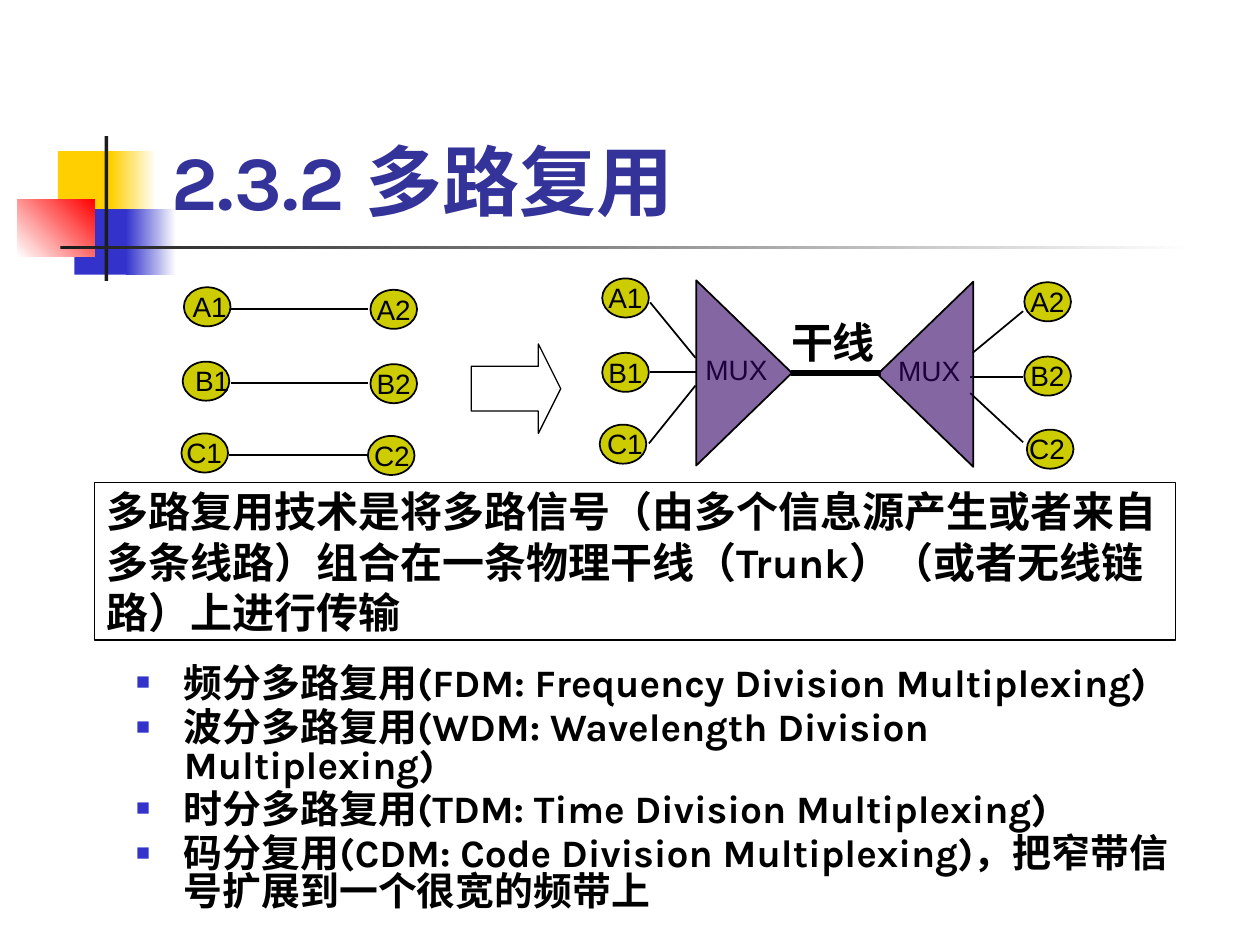
from dataclasses import dataclass

from lxml.etree import SubElement
from pptx import Presentation
from pptx.dml.color import RGBColor
from pptx.enum.shapes import MSO_CONNECTOR, MSO_SHAPE as SHAPE
from pptx.enum.text import MSO_ANCHOR as ANCHOR, MSO_AUTO_SIZE as FIT, PP_ALIGN as ALIGN
from pptx.oxml.ns import qn
from pptx.util import Pt

PX = 9144


@dataclass(frozen=True)
class Theme:
    heading: str = "333399"
    ink: str = "000000"
    paper: str = "FFFFFF"
    yellow: str = "FFCF01"
    blue: str = "3333CC"
    red: str = "FF0000"
    bar: str = "1C1C1C"
    node: str = "CCCC00"
    mux: str = "330066"
    text_font: str = "Karla"
    label_font: str = "Arial"
    title_size: float = 44
    box_size: float = 24
    list_size: float = 22.2
    label_size: float = 16


T = Theme()

TITLE = "2.3.2 多路复用"
SUMMARY = ("多路复用技术是将多路信号（由多个信息源产生或者来自多条线路）"
           "组合在一条物理干线（Trunk）（或者无线链路）上进行传输")
METHODS = [
    "频分多路复用(FDM: Frequency Division Multiplexing)",
    "波分多路复用(WDM: Wavelength Division Multiplexing)",
    "时分多路复用(TDM: Time Division Multiplexing)",
    "码分复用(CDM: Code Division Multiplexing)，把窄带信号扩展到一个很宽的频带上",
]
DECOR = [
    ((46, 120, 48, 52), (T.yellow,), 0),
    ((88, 120, 36, 52), (T.yellow, T.paper), 0),
    ((59, 166, 46, 52), (T.blue,), 0),
    ((100, 166, 40, 52), (T.blue, T.paper), 0),
    ((14, 158, 61, 46), (T.paper, T.red), 45),
    ((83, 108, 3, 115), (T.bar,), 0),
    ((48, 195, 900, 3), (T.bar, T.paper), 0),
]
NODES = [
    ("A1", 146, 228, -3), ("B1", 145, 287, 0), ("C1", 144, 344, -6),
    ("A2", 294, 230, -5), ("B2", 294, 289, -5), ("C2", 292, 346, -5),
    ("A1", 478, 221, -5), ("B1", 478, 280, -5), ("C1", 476, 337, -4),
    ("A2", 813, 224, -5), ("B2", 813, 283, -5), ("C2", 815, 341, -8),
]
LINKS = [
    (183, 245, 292, 245), (183, 304, 292, 304), (182, 361, 291, 361),
    (516, 240, 552, 284), (516, 295, 553, 295), (515, 352, 552, 306),
    (772, 280, 812, 247), (770, 299, 812, 299), (770, 312, 812, 351),
]
TRUNK = (628, 296, 699, 296)
MUXES = [((550, 275, 69, 36), (517, 258, 147, 76), 90),
         ((703, 276, 69, 36), (661, 259, 147, 76), 270)]


def emu(box):
    return [v * PX for v in box]


def rgb(color):
    return RGBColor.from_string(color)


def write(p, text, size, font=T.text_font, color=T.ink, bold=True):
    r = p.add_run()
    r.text = text
    r.font.size, r.font.name, r.font.bold = Pt(size), font, bold
    r.font.color.rgb = rgb(color)


def shape(kind, box, colors, line=None, angle=0):
    sp = s.shapes.add_shape(kind, *emu(box))
    sp.shadow.inherit = False
    if len(colors) == 1:
        sp.fill.solid()
        sp.fill.fore_color.rgb = rgb(colors[0])
    else:
        sp.fill.gradient()
        sp.fill.gradient_angle = angle
        for stop, color, position in zip(sp.fill.gradient_stops, colors, (0, 1)):
            stop.color.rgb, stop.position = rgb(color), position
    if line:
        sp.line.color.rgb, sp.line.width = rgb(T.ink), Pt(line)
    else:
        sp.line.fill.background()
    return sp


def label(text, box, wrap=False, **style):
    tf = s.shapes.add_textbox(*emu(box)).text_frame
    tf.word_wrap = wrap
    tf.auto_size = FIT.SHAPE_TO_FIT_TEXT
    write(tf.paragraphs[0], text, **style)


def link(ends, width):
    c = s.shapes.add_connector(MSO_CONNECTOR.STRAIGHT, *emu(ends))
    c.line.color.rgb, c.line.width = rgb(T.ink), Pt(width)
    SubElement(c.element.spPr, qn("a:effectLst"))


def place(ph, box, anchor):
    ph.left, ph.top, ph.width, ph.height = emu(box)
    s.shapes.element.append(ph.element)
    tf = ph.text_frame
    tf.word_wrap, tf.auto_size, tf.vertical_anchor = True, FIT.NONE, anchor
    return tf


def bullet(p):
    pPr = p._p.get_or_add_pPr()
    pPr.set("marL", str(38 * PX))
    pPr.set("indent", str(-38 * PX))
    SubElement(SubElement(pPr, qn("a:buClr")), qn("a:srgbClr"), val=T.blue)
    SubElement(pPr, qn("a:buSzPct"), val="60000")
    SubElement(pPr, qn("a:buFont"), typeface=T.label_font)
    SubElement(pPr, qn("a:buChar"), char="■")


prs = Presentation()
prs.slide_width, prs.slide_height = emu((1000, 750))
s = prs.slides.add_slide(prs.slide_layouts[1])
small = dict(size=T.label_size, font=T.label_font, bold=False)

for box, colors, angle in DECOR:
    shape(SHAPE.RECTANGLE, box, colors, angle=angle)

p = place(s.shapes.title, (126, 67, 852, 117), ANCHOR.BOTTOM).paragraphs[0]
p.alignment = ALIGN.LEFT
write(p, TITLE, T.title_size, color=T.heading)

tf = place(s.placeholders[1], (98, 525, 850, 220), ANCHOR.TOP)
for i, method in enumerate(METHODS):
    p = tf.add_paragraph() if i else tf.paragraphs[0]
    p.line_spacing, p.space_before = 0.8, Pt(4)
    bullet(p)
    write(p, method, T.list_size)

tf = shape(SHAPE.RECTANGLE, (75, 383, 858, 125), (T.paper,), 0.75).text_frame
tf.word_wrap, tf.vertical_anchor = True, ANCHOR.MIDDLE
tf.paragraphs[0].alignment = ALIGN.LEFT
write(tf.paragraphs[0], SUMMARY, T.box_size)

for name, x, y, dx in NODES:
    shape(SHAPE.OVAL, (x, y, 37, 31), (T.node,), 1)
    label(name, (x + dx, y - 3, 49 if name[0] == "C" else 47, 37), **small)

for ends in LINKS:
    link(ends, 1)
link(TRUNK, 3)

for text_box, box, turn in MUXES:
    label("MUX", text_box, **small)
    sp = shape(SHAPE.ISOSCELES_TRIANGLE, box, (T.mux,), 1)
    sp.rotation = turn
    color = sp.element.spPr.find(qn("a:solidFill")).find(qn("a:srgbClr"))
    SubElement(color, qn("a:alpha"), val="60000")

arrow = shape(SHAPE.RIGHT_ARROW, (374, 273, 71, 71), (T.paper,), 0.75)
arrow.adjustments[0], arrow.adjustments[1] = 0.5, 0.25
label("干线", (618, 246, 94, 50), wrap=True, size=T.box_size)

prs.save("out.pptx")
